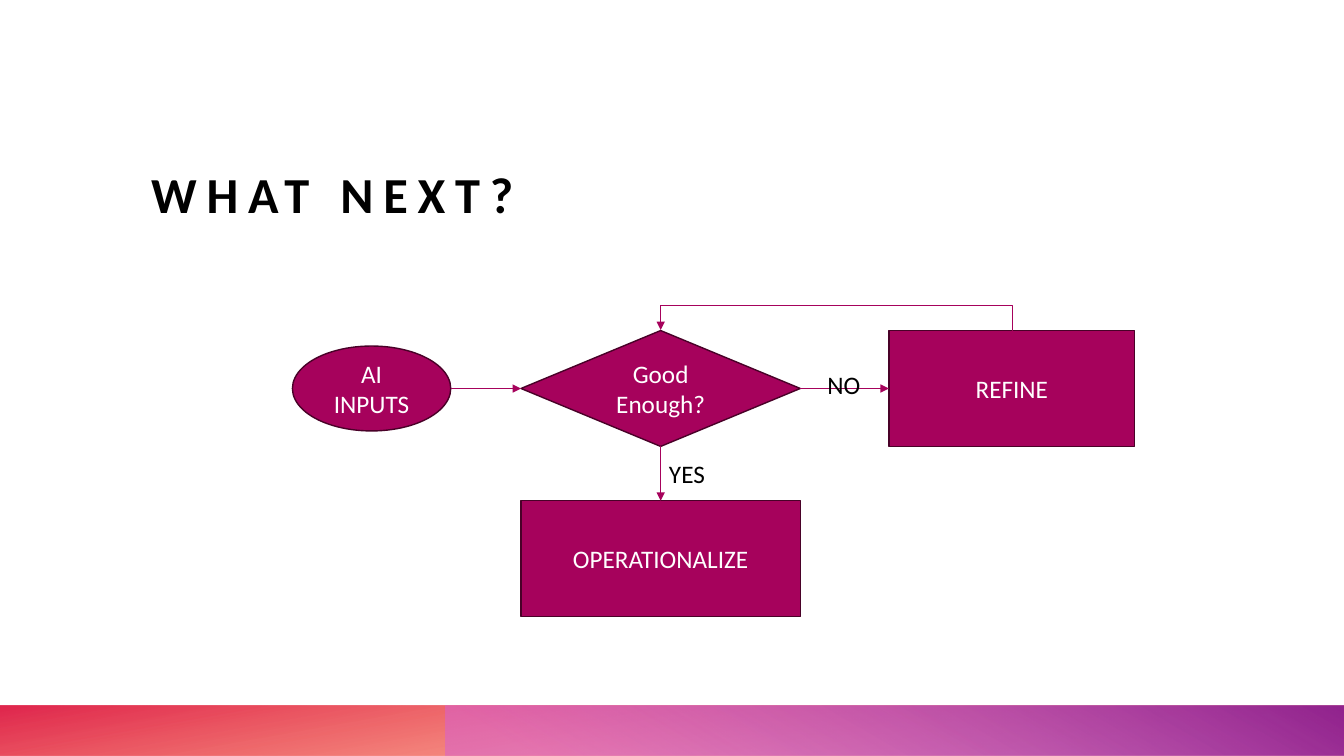
from dataclasses import dataclass

from lxml import etree
from pptx import Presentation
from pptx.dml.color import RGBColor
from pptx.enum import shapes, text
from pptx.oxml import ns
from pptx.util import Cm, Pt

SHAPE = shapes.MSO_SHAPE
TOP, LEFT, BOTTOM, RIGHT = range(4)


@dataclass(frozen=True)
class Theme:
    font: str = "Calibri"
    title_size: int = 36
    body_size: int = 18
    ink: str = "000000"
    paper: str = "FFFFFF"
    accent: str = "A6025C"
    outline: str = "490128"


@dataclass(frozen=True)
class Node:
    label: str
    kind: SHAPE
    x: float
    y: float
    w: float
    h: float


@dataclass(frozen=True)
class Stop:
    position: float
    color: str
    opacity: int


@dataclass(frozen=True)
class Band:
    x: float
    w: float
    rotation: int
    angle: int
    stops: tuple[Stop, Stop]


@dataclass(frozen=True)
class Label:
    text: str
    x: float
    y: float


THEME = Theme()
SLIDE_W, SLIDE_H = 33.87, 19.05
BAND_H = 1.27
ROW_Y, BOX_H = 8.33, 2.92
MIDDLE_X, MIDDLE_W = 13.13, 7.04
OVAL_H = 2.14

BANDS = (
    Band(0, SLIDE_W, 180, 100, (Stop(0.14, "FE4A00", 28), Stop(1, "DA002F", 85))),
    Band(11.22, SLIDE_W - 11.22, 0, 240,
         (Stop(0.09, "D861D4", 55), Stop(0.99, "92248E", 100))),
)
INPUTS = Node("AI INPUTS", SHAPE.OVAL, 7.37, ROW_Y + (BOX_H - OVAL_H) / 2, 3.99, OVAL_H)
DECISION = Node("Good Enough?", SHAPE.FLOWCHART_DECISION, MIDDLE_X, ROW_Y, MIDDLE_W, BOX_H)
REFINE = Node("REFINE", SHAPE.RECTANGLE, 22.4, ROW_Y, 6.2, BOX_H)
OPERATE = Node("OPERATIONALIZE", SHAPE.RECTANGLE, MIDDLE_X, 12.62, MIDDLE_W, BOX_H)
LABELS = (Label("NO", 20.6, 9.19), Label("YES", 16.61, 11.43))


def rgb(value: str) -> RGBColor:
    return RGBColor.from_string(value)


def write(sp, content: str, *, size: int = THEME.body_size, color: str = THEME.ink,
          bold: bool = False, align=text.PP_ALIGN.LEFT,
          anchor=text.MSO_ANCHOR.TOP, spacing: float = 0) -> None:
    tf = sp.text_frame
    tf.word_wrap = True
    tf.vertical_anchor = anchor
    p = tf.paragraphs[0]
    p.alignment = align
    r = p.add_run()
    r.text = content
    r.font.name, r.font.size, r.font.bold = THEME.font, Pt(size), bold
    r.font.color.rgb = rgb(color)
    if spacing:
        r.font._element.set("spc", str(round(spacing * 100)))


def add_band(slide, band: Band) -> None:
    sp = slide.shapes.add_shape(SHAPE.RECTANGLE, Cm(band.x), Cm(SLIDE_H - BAND_H),
                                Cm(band.w), Cm(BAND_H))
    sp.shadow.inherit = False
    sp.line.fill.background()
    sp.rotation = band.rotation
    sp._element.spPr.find(ns.qn("a:xfrm")).set("flipH", "1")
    sp.fill.gradient()
    sp.fill.gradient_angle = 360 - band.angle
    for target, stop in zip(sp.fill.gradient_stops, band.stops):
        target.position = stop.position
        target.color.rgb = rgb(stop.color)
    for clr, stop in zip(sp._element.spPr.iter(ns.qn("a:srgbClr")), band.stops):
        etree.SubElement(clr, ns.qn("a:alpha")).set("val", str(stop.opacity * 1000))


def add_node(slide, node: Node):
    sp = slide.shapes.add_shape(node.kind, Cm(node.x), Cm(node.y), Cm(node.w), Cm(node.h))
    sp.shadow.inherit = False
    sp.fill.solid()
    sp.fill.fore_color.rgb = rgb(THEME.accent)
    sp.line.color.rgb = rgb(THEME.outline)
    sp.line.width = Pt(1)
    write(sp, node.label, color=THEME.paper, align=text.PP_ALIGN.CENTER,
          anchor=text.MSO_ANCHOR.MIDDLE)
    return sp


def add_arrow(slide, start, start_side: int, end, end_side: int,
              kind=shapes.MSO_CONNECTOR.STRAIGHT):
    def side_point(sp, side: int) -> tuple[int, int]:
        x, y = sp.left + sp.width // 2, sp.top + sp.height // 2
        return {TOP: (x, sp.top), LEFT: (sp.left, y),
                BOTTOM: (x, sp.top + sp.height), RIGHT: (sp.left + sp.width, y)}[side]

    arrow = slide.shapes.add_connector(kind, *side_point(start, start_side),
                                       *side_point(end, end_side))
    # An oval numbers its connection sites differently, so only its far end is joined.
    if start.auto_shape_type != SHAPE.OVAL:
        arrow.begin_connect(start, start_side)
    arrow.end_connect(end, end_side)
    arrow.line.color.rgb = rgb(THEME.accent)
    arrow.line.width = Pt(0.5)
    etree.SubElement(arrow.line._get_or_add_ln(), ns.qn("a:tailEnd")).set("type", "triangle")
    etree.SubElement(arrow._element.spPr, ns.qn("a:effectLst"))
    return arrow


def add_return_arrow(slide, start, end) -> None:
    """Join two tops at the same height with an elbow that rises above them."""
    arrow = add_arrow(slide, start, TOP, end, TOP, shapes.MSO_CONNECTOR.ELBOW)
    rise, depth = Cm(0.64), Cm(0.03)
    span, middle = arrow.width, arrow.left + arrow.width // 2
    arrow.left, arrow.top = middle - depth // 2, start.top - span // 2
    arrow.width, arrow.height = depth, span
    spPr = arrow._element.spPr
    xfrm = spPr.find(ns.qn("a:xfrm"))
    xfrm.attrib.pop("flipH", None)
    xfrm.set("rot", str(270 * 60000))
    xfrm.set("flipV", "1")
    guides = spPr.find(ns.qn("a:prstGeom")).find(ns.qn("a:avLst"))
    guide = etree.SubElement(guides, ns.qn("a:gd"))
    guide.set("name", "adj1")
    guide.set("fmla", f"val {round(rise / depth * 100000)}")


def add_title(slide, content: str) -> None:
    sp = slide.shapes.title
    sp.left, sp.top, sp.width, sp.height = Cm(3.81), Cm(2.21), Cm(28.45), Cm(3.43)
    tf = sp.text_frame
    tf.margin_left = tf.margin_top = tf.margin_right = tf.margin_bottom = 0
    write(sp, content, size=THEME.title_size, bold=True,
          anchor=text.MSO_ANCHOR.BOTTOM, spacing=7)


def main() -> None:
    prs = Presentation()
    prs.slide_width, prs.slide_height = Cm(SLIDE_W), Cm(SLIDE_H)
    slide = prs.slides.add_slide(prs.slide_layouts[5])
    for band in BANDS:
        add_band(slide, band)
    add_title(slide, "WHAT NEXT?")

    inputs, decision, refine, operate = (
        add_node(slide, node) for node in (INPUTS, DECISION, REFINE, OPERATE))
    add_arrow(slide, inputs, RIGHT, decision, LEFT)
    add_arrow(slide, decision, RIGHT, refine, LEFT)
    add_arrow(slide, decision, BOTTOM, operate, TOP)
    add_return_arrow(slide, refine, decision)
    for label in LABELS:
        sp = slide.shapes.add_textbox(Cm(label.x), Cm(label.y), Cm(1.8), Cm(1.02))
        write(sp, label.text)
    prs.save("out.pptx")


if __name__ == "__main__":
    main()
